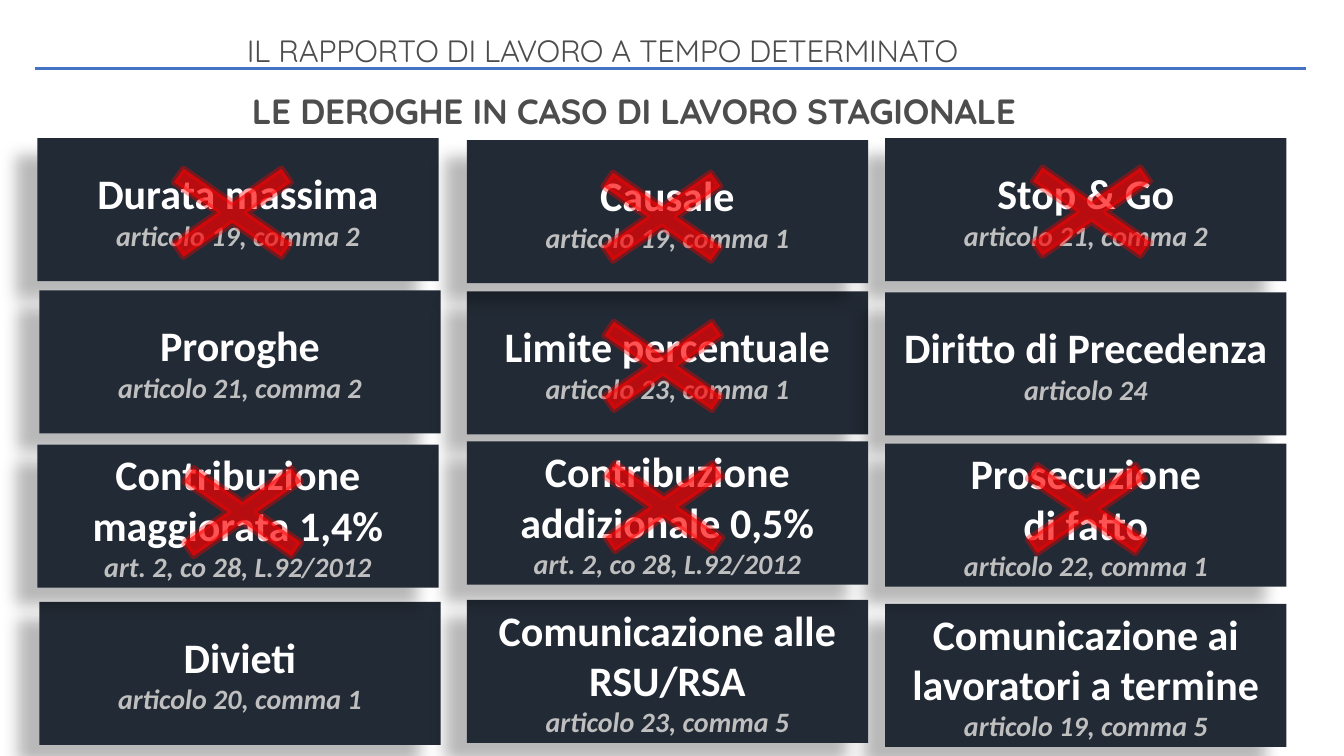
from lxml import etree
from pptx import Presentation
from pptx.dml.color import RGBColor
from pptx.enum.shapes import MSO_CONNECTOR, MSO_SHAPE
from pptx.enum.text import MSO_ANCHOR, PP_ALIGN
from pptx.oxml.ns import qn
from pptx.util import Inches, Pt

RECT, CROSS = MSO_SHAPE.RECTANGLE, MSO_SHAPE.MATH_MULTIPLY
STRAIGHT = MSO_CONNECTOR.STRAIGHT
CENTER, MIDDLE = PP_ALIGN.CENTER, MSO_ANCHOR.MIDDLE

HEADINGS = [
    ("IL RAPPORTO DI LAVORO A TEMPO DETERMINATO", 2.35, 0.31, 22, False),
    ("LE DEROGHE IN CASO DI LAVORO STAGIONALE", 2.4, 0.89, 25, True),
]
COLUMNS = [0.37, 4.63, 8.78]
ROWS = [1.37, 2.88, 4.38, 5.95]
CARD_W, CARD_H, CROSS_W = 3.98, 1.42, 2.05

# column, row, nudge, title lines, article, cross offset within the card
CARDS = [
    (0, 0, (0, 0), ["Durata massima"], "articolo 19, comma 2", (0.91, 0.03)),
    (0, 1, (0.02, 0), ["Proroghe"], "articolo 21, comma 2", None),
    (2, 0, (0, 0), ["Stop & Go"], "articolo 21, comma 2", (1.02, 0.02)),
    (1, 1, (0, 0.01), ["Limite percentuale"], "articolo 23, comma 1", (0.92, 0.03)),
    (0, 3, (0.02, 0.02), ["Divieti"], "articolo 20, comma 1", None),
    (2, 1, (0, 0.02), ["Diritto di Precedenza"], "articolo 24", None),
    (0, 2, (0, 0.03), ["Contribuzione maggiorata 1,4%"], "art. 2, co 28, L.92/2012", (1.01, -0.04)),
    (2, 3, (0, 0.04), ["Comunicazione ai lavoratori a termine"], "articolo 19, comma 5", None),
    (1, 0, (0, 0.02), ["Causale"], "articolo 19, comma 1", (0.91, 0.05)),
    (2, 2, (0, 0.02), ["Prosecuzione", "di fatto"], "articolo 22, comma 1", (0.97, -0.06)),
    (1, 3, (0, 0), ["Comunicazione alle RSU/RSA"], "articolo 23, comma 5", None),
    (1, 2, (0, 0), ["Contribuzione addizionale 0,5%"], "art. 2, co 28, L.92/2012", (0.93, -0.06)),
]


def rgb(value):
    return RGBColor.from_string(value)


def add_run(p, text, size, font, color, bold=False, italic=False):
    r = p.add_run()
    r.text = text
    r.font.size, r.font.name = Pt(size), font
    r.font.bold, r.font.italic = bold, italic
    r.font.color.rgb = rgb(color)
    return r


def set_alpha(fill_parent, percent):
    color = fill_parent.find(qn("a:solidFill"))[0]
    etree.SubElement(color, qn("a:alpha"), val=str(percent * 1000))


def add_shape(kind, left, top, width, fill):
    sp = s.shapes.add_shape(kind, Inches(left), Inches(top), Inches(width), Inches(CARD_H))
    sp.shadow.inherit = False
    sp.fill.solid()
    sp.fill.fore_color.rgb = rgb(fill)
    return sp


def add_heading(text, left, top, size, bold):
    tf = s.shapes.add_textbox(Inches(left), Inches(top), Inches(8.64), Inches(0.33)).text_frame
    tf.word_wrap = True
    p = tf.paragraphs[0]
    p.line_spacing = 0.9
    r = add_run(p, text, size, "Quicksand", "4D4D4D", bold)
    r.font._element.set("spc", "-20")


def add_card(left, top, titles, article):
    sp = add_shape(RECT, left, top, CARD_W, "222A35")
    sp.line.fill.background()
    effects = sp._element.spPr.find(qn("a:effectLst"))
    shadow = etree.SubElement(effects, qn("a:outerShdw"), blurRad=str(Pt(11.8)),
                              dist=str(Pt(19.7)), dir=str(141 * 60000),
                              algn="tr", rotWithShape="0")
    color = etree.SubElement(shadow, qn("a:srgbClr"), val="000000")
    etree.SubElement(color, qn("a:alpha"), val="28000")
    tf = sp.text_frame
    tf.word_wrap, tf.vertical_anchor = True, MIDDLE
    for i, text in enumerate(titles + [article]):
        p = tf.paragraphs[0] if i == 0 else tf.add_paragraph()
        p.alignment = CENTER
        if i < len(titles):
            add_run(p, text, 30, "Calibri", "FFFFFF", True)
        else:
            add_run(p, text, 20, "Calibri", "BFBFBF", True, True)


def add_cross(left, top):
    sp = add_shape(CROSS, left, top, CROSS_W, "FF0000")
    sp.adjustments[0] = 0.116
    sp.line.width = Pt(4.5)
    sp.line.color.rgb = rgb("FF0000")
    spPr = sp._element.spPr
    set_alpha(spPr, 68)
    set_alpha(spPr.find(qn("a:ln")), 36)


prs = Presentation()
prs.slide_width, prs.slide_height = Inches(13.33), Inches(7.5)
s = prs.slides.add_slide(prs.slide_layouts[6])

rule = s.shapes.add_connector(STRAIGHT, Inches(0.35), Inches(0.68), Inches(12.95), Inches(0.68))
rule.line.color.rgb, rule.line.width = rgb("4472C4"), Pt(2.25)
etree.SubElement(rule._element.spPr, qn("a:effectLst"))

crosses = []
for col, row, (dx, dy), titles, article, cross in CARDS:
    left, top = COLUMNS[col] + dx, ROWS[row] + dy
    add_card(left, top, titles, article)
    if cross:
        crosses.append((left + cross[0], top + cross[1]))
for heading in HEADINGS:
    add_heading(*heading)
for left, top in crosses:
    add_cross(left, top)

prs.save("out.pptx")
